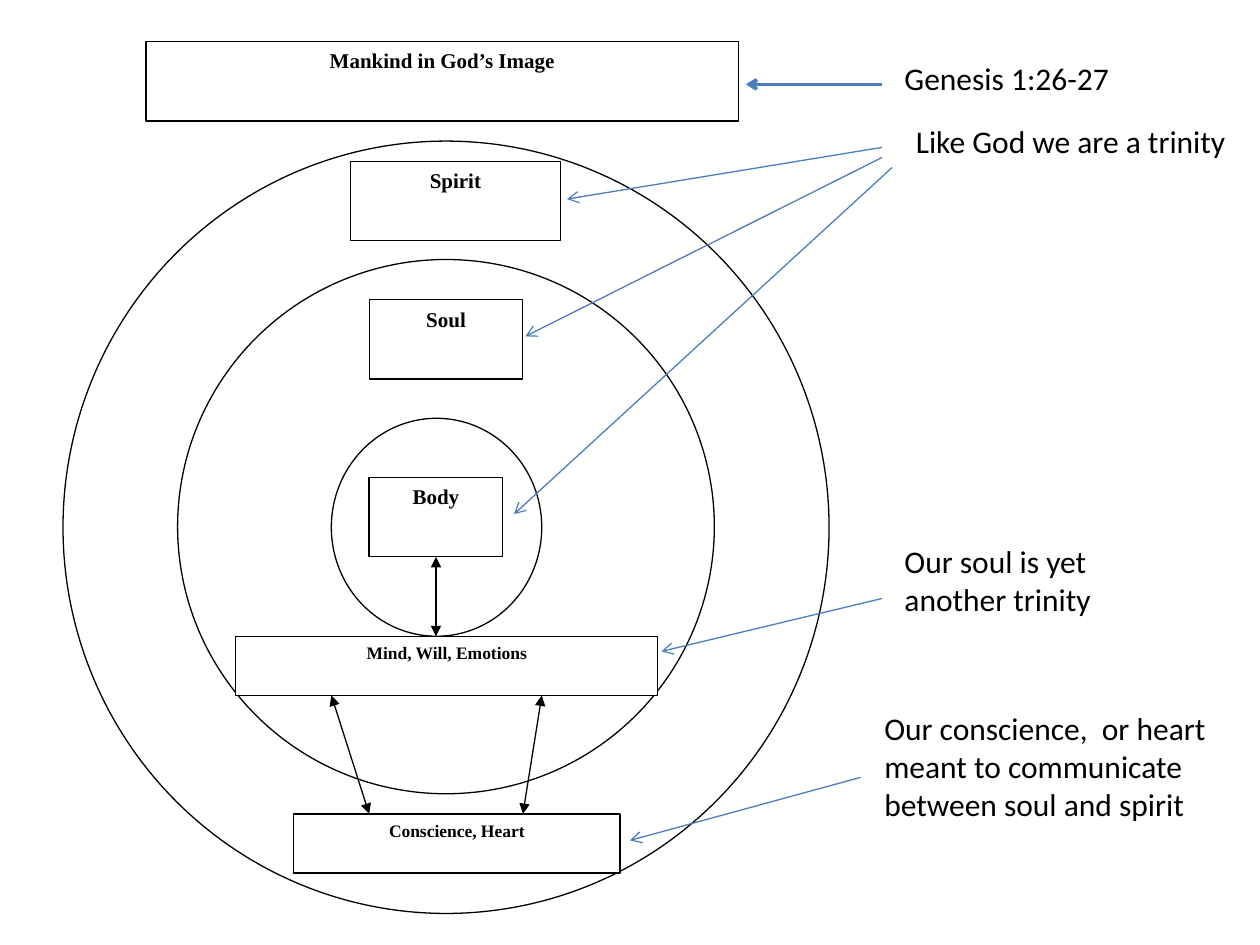
from lxml.etree import SubElement
from pptx import Presentation
from pptx.dml.color import RGBColor
from pptx.enum.shapes import MSO_CONNECTOR, MSO_SHAPE
from pptx.enum.text import MSO_ANCHOR, MSO_AUTO_SIZE, PP_ALIGN
from pptx.oxml.ns import qn
from pptx.util import Inches, Pt

BLACK = RGBColor(0x00, 0x00, 0x00)
WHITE = RGBColor(0xFF, 0xFF, 0xFF)
BLUE = RGBColor(0x4B, 0x7E, 0xBC)

LABEL_FRAME = {"word_wrap": True, "auto_size": MSO_AUTO_SIZE.NONE,
               "vertical_anchor": MSO_ANCHOR.TOP}
NOTE_FRAME = {"word_wrap": False, "auto_size": MSO_AUTO_SIZE.SHAPE_TO_FIT_TEXT,
              "vertical_anchor": MSO_ANCHOR.TOP}
LABEL_FONT = {"name": "Times New Roman", "bold": True}
NOTE_FONT = {"name": "Calibri", "size": Pt(18)}

presentation = Presentation()
presentation.slide_width = Inches(10)
presentation.slide_height = Inches(7.5)
slide = presentation.slides.add_slide(presentation.slide_layouts[5])
shapes = slide.shapes


def format_shape(shape, text="", alignment=PP_ALIGN.CENTER, frame_format=LABEL_FRAME,
                 font_format=LABEL_FONT, outlined=True):
    """Write the text and, for an outlined shape, set white fill and black line."""
    if outlined:
        shape.fill.solid()
        shape.fill.fore_color.rgb = WHITE
        shape.line.color.rgb = BLACK
        shape.line.width = Pt(0.75)
    frame = shape.text_frame
    frame.text = text
    for name, value in frame_format.items():
        setattr(frame, name, value)
    for paragraph in frame.paragraphs:
        paragraph.alignment = alignment
        paragraph.font.color.rgb = BLACK
        for run in paragraph.runs:
            run.font.color.rgb = BLACK
            for name, value in font_format.items():
                setattr(run.font, name, value)


def add_arrow(start, end, color, width, **arrowheads):
    """Draw a straight connector; arrowheads are headEnd and tailEnd types."""
    points = [Inches(value) for value in (*start, *end)]
    connector = shapes.add_connector(MSO_CONNECTOR.STRAIGHT, *points)
    connector.line.color.rgb = color
    connector.line.width = Pt(width)
    line = connector.line._get_or_add_ln()
    for tag, kind in arrowheads.items():
        SubElement(line, qn(f"a:{tag}"), type=kind)
    SubElement(connector._element.spPr, qn("a:effectLst"))
    return connector


# Title box
title = shapes.title
title.left, title.top = Inches(1.16), Inches(0.33)
title.width, title.height = Inches(4.7), Inches(0.63)
format_shape(title, "Mankind in God’s Image", font_format={**LABEL_FONT, "size": Pt(12)})

# Nested circles for spirit, soul and body
for box in [(0.5, 1.12, 6.08, 6.13), (1.41, 2.06, 4.26, 4.24), (2.63, 3.32, 1.67, 1.73)]:
    circle = shapes.add_shape(MSO_SHAPE.OVAL, *map(Inches, box))
    circle.shadow.inherit = False
    format_shape(circle)

# Labelled boxes
labels = [
    ("Spirit", 12, (2.78, 1.28, 1.67, 0.63)),
    ("Soul", 12, (2.93, 2.38, 1.22, 0.63)),
    ("Body", 12, (2.93, 3.79, 1.06, 0.63)),
    ("Mind, Will, Emotions", 10, (1.87, 5.05, 3.35, 0.47)),
    ("Conscience, Heart", 10, (2.33, 6.46, 2.59, 0.47)),
]
label_boxes = {}
for text, size, box in labels:
    label = shapes.add_shape(MSO_SHAPE.RECTANGLE, *map(Inches, box))
    label.shadow.inherit = False
    format_shape(label, text, font_format={**LABEL_FONT, "size": Pt(size)})
    label_boxes[text] = label

# Two-way arrows between body, soul and conscience
two_way = {"headEnd": "triangle", "tailEnd": "triangle"}
body_link = add_arrow((3.46, 4.42), (3.46, 5.05), BLACK, 0.75, **two_way)
body_link.begin_connect(label_boxes["Body"], 2)
for start, end in [((2.93, 6.46), (2.63, 5.52)), ((4.15, 6.46), (4.3, 5.52))]:
    add_arrow(start, end, BLACK, 0.75, **two_way)

# Notes on the right
notes = [
    ("Genesis 1:26-27", (7.08, 0.42, 1.84, 0.4)),
    ("Like God we are a trinity", (7.17, 0.92, 2.69, 0.4)),
    ("Our soul is yet\nanother trinity", (7.08, 4.25, 1.72, 0.71)),
    ("Our conscience,  or heart\nmeant to communicate\nbetween soul and spirit",
     (6.92, 5.58, 2.84, 1.01)),
]
for text, box in notes:
    note = shapes.add_textbox(*map(Inches, box))
    format_shape(note, text, PP_ALIGN.LEFT, NOTE_FRAME, NOTE_FONT, outlined=False)

# Pointers from the notes to the diagram
pointers = [
    ((7, 0.67), (5.92, 0.67), 2),
    ((7, 1.17), (4.5, 1.58), 0.75),
    ((7, 1.25), (4.17, 2.67), 0.75),
    ((7.08, 1.33), (4.08, 4.08), 0.75),
    ((7, 4.75), (5.25, 5.17), 0.75),
    ((6.83, 6.17), (5, 6.67), 0.75),
]
for start, end, width in pointers:
    add_arrow(start, end, BLUE, width, tailEnd="arrow")

presentation.save("out.pptx")
